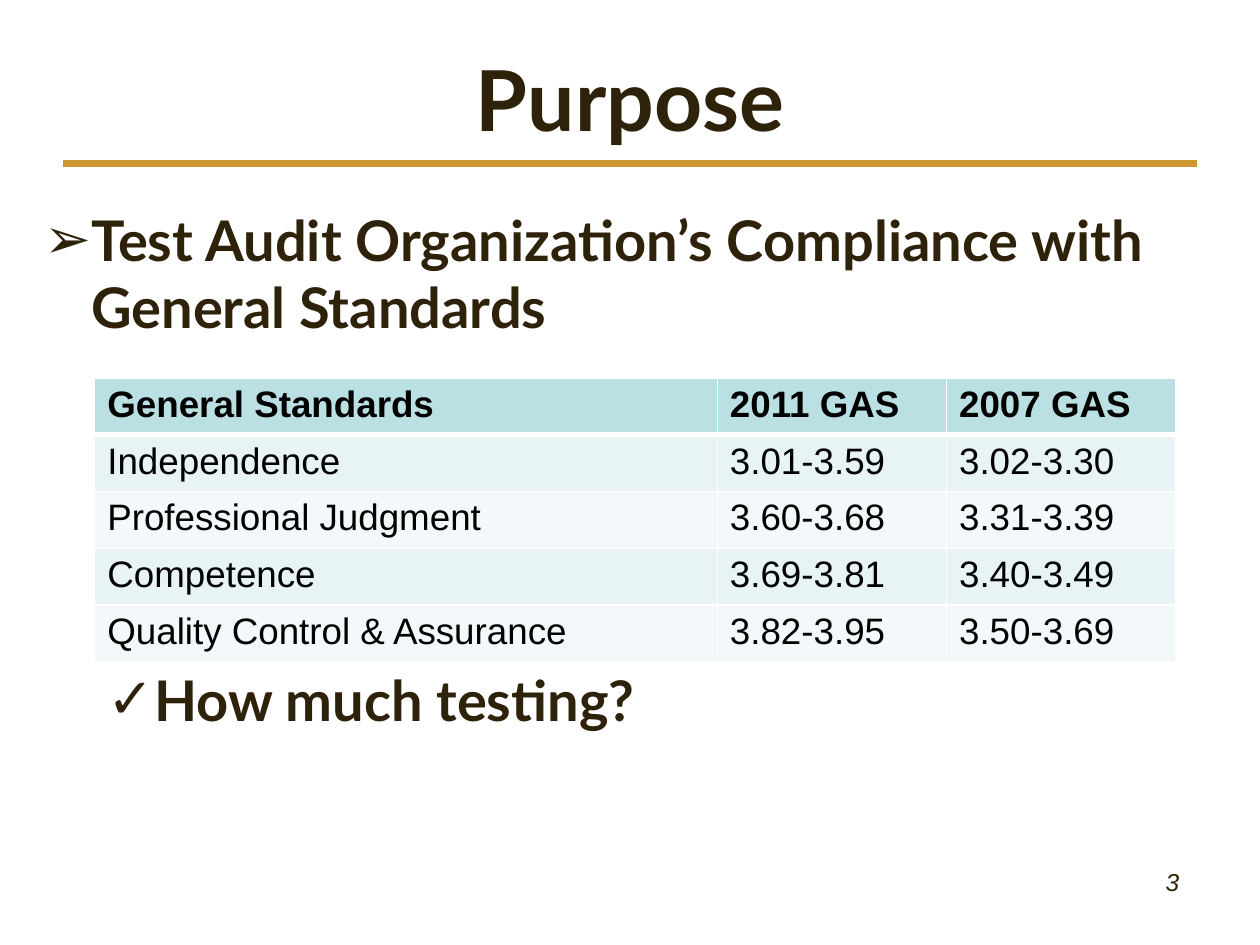
from dataclasses import dataclass

from lxml import etree
from pptx import Presentation
from pptx.dml.color import RGBColor
from pptx.enum import shapes, text
from pptx.oxml.ns import qn
from pptx.util import Cm, Pt


@dataclass(frozen=True)
class Theme:
    heading_font: str = "Lato"
    body_font: str = "Arial"
    ink: str = "2F220B"
    gold: str = "CF9731"
    black: str = "000000"
    white: str = "FFFFFF"
    header_fill: str = "BBE0E3"
    band_fills: tuple = ("E7F3F4", "F3F9FA")
    title_size: int = 48
    bullet_size: int = 32
    table_size: int = 21
    number_size: int = 14


class SlideBuilder:
    def __init__(self, deck, theme):
        self.theme = theme
        self.slide = deck.slides.add_slide(deck.slide_layouts[5])

    def style(self, para, font, size, color, bold=False, italic=False):
        for span in para.runs:
            span.font.name = font
            span.font.size = Pt(size)
            span.font.bold = bold
            span.font.italic = italic
            span.font.color.rgb = RGBColor.from_string(color)

    def title(self, words, left, top, width, height):
        box = self.slide.shapes.title
        box.left, box.top, box.width, box.height = map(Cm, (left, top, width, height))
        frame = box.text_frame
        frame.text = words
        frame.vertical_anchor = text.MSO_ANCHOR.MIDDLE
        para = frame.paragraphs[0]
        para.alignment = text.PP_ALIGN.CENTER
        self.style(para, self.theme.heading_font, self.theme.title_size,
                   self.theme.ink, bold=True)

    def rule(self, left, top, width):
        line = self.slide.shapes.add_connector(
            shapes.MSO_CONNECTOR.STRAIGHT, Cm(left), Cm(top), Cm(left + width), Cm(top))
        line.line.color.rgb = RGBColor.from_string(self.theme.gold)
        line.line.width = Pt(4)
        etree.SubElement(line._element.spPr, qn("a:effectLst"))

    def text_box(self, words, left, top, width, height):
        box = self.slide.shapes.add_textbox(Cm(left), Cm(top), Cm(width), Cm(height))
        box.text_frame.word_wrap = True
        box.text_frame.text = words
        return box.text_frame.paragraphs[0]

    def bullet(self, words, mark, left, top, width, height, indent, hanging):
        para = self.text_box(words, left, top, width, height)
        props = para._p.get_or_add_pPr()
        props.set("marL", str(Cm(indent)))
        props.set("indent", str(-Cm(hanging)))
        etree.SubElement(props, qn("a:buFont"), typeface=self.theme.body_font)
        etree.SubElement(props, qn("a:buChar"), char=mark)
        self.style(para, self.theme.heading_font, self.theme.bullet_size,
                   self.theme.ink, bold=True)

    def page_number(self, number, left, top, width, height):
        para = self.text_box(number, left, top, width, height)
        para.alignment = text.PP_ALIGN.RIGHT
        self.style(para, self.theme.body_font, self.theme.number_size,
                   self.theme.ink, italic=True)

    def borders(self, cell, widths):
        props = cell._tc.get_or_add_tcPr()
        for position, (side, width) in enumerate(widths.items()):
            edge = etree.Element(qn(f"a:ln{side}"), w=str(Pt(width)))
            fill = etree.SubElement(edge, qn("a:solidFill"))
            etree.SubElement(fill, qn("a:srgbClr"), val=self.theme.white)
            props.insert(position, edge)

    def table(self, rows, left, top, column_widths, row_height):
        frame = self.slide.shapes.add_table(
            len(rows), len(column_widths), Cm(left), Cm(top),
            Cm(sum(column_widths)), Cm(row_height * len(rows)))
        grid = frame.table
        for column, width in zip(grid.columns, column_widths):
            column.width = Cm(width)
        for r, values in enumerate(rows):
            header = r == 0
            fill = self.theme.header_fill if header else self.theme.band_fills[(r - 1) % 2]
            for c, value in enumerate(values):
                cell = grid.cell(r, c)
                cell.text = value
                cell.fill.solid()
                cell.fill.fore_color.rgb = RGBColor.from_string(fill)
                self.style(cell.text_frame.paragraphs[0], self.theme.body_font,
                           self.theme.table_size, self.theme.black, bold=header)
                self.borders(cell, {"L": 1, "R": 1, "T": 3 if r == 1 else 1,
                                    "B": 3 if header else 1})


def main():
    deck = Presentation()
    deck.slide_width, deck.slide_height = Cm(25.4), Cm(19.05)
    page = SlideBuilder(deck, Theme())

    # Heading with gold rule
    page.rule(1.27, 3.3, 22.86)
    page.title("Purpose", 1.27, 0.76, 22.86, 2.41)

    # Main point
    page.bullet("Test Audit Organization’s Compliance with General Standards", "➢",
                0.64, 4.01, 23.7, 3, indent=0.95, hanging=0.95)

    # Standards and their paragraph ranges
    page.table([
        ("General Standards", "2011 GAS", "2007 GAS"),
        ("Independence", "3.01-3.59", "3.02-3.30"),
        ("Professional Judgment", "3.60-3.68", "3.31-3.39"),
        ("Competence", "3.69-3.81", "3.40-3.49"),
        ("Quality Control & Assurance", "3.82-3.95", "3.50-3.69"),
    ], 1.91, 7.62, (12.55, 4.62, 4.62), 1.05)

    # Follow-up question
    page.bullet("How much testing?", "✓",
                0.64, 13.3, 23.7, 1.6, indent=2.06, hanging=0.79)

    # Footer
    page.page_number("3", 18.1, 17.35, 5.92, 1.32)

    deck.save("out.pptx")


if __name__ == "__main__":
    main()
